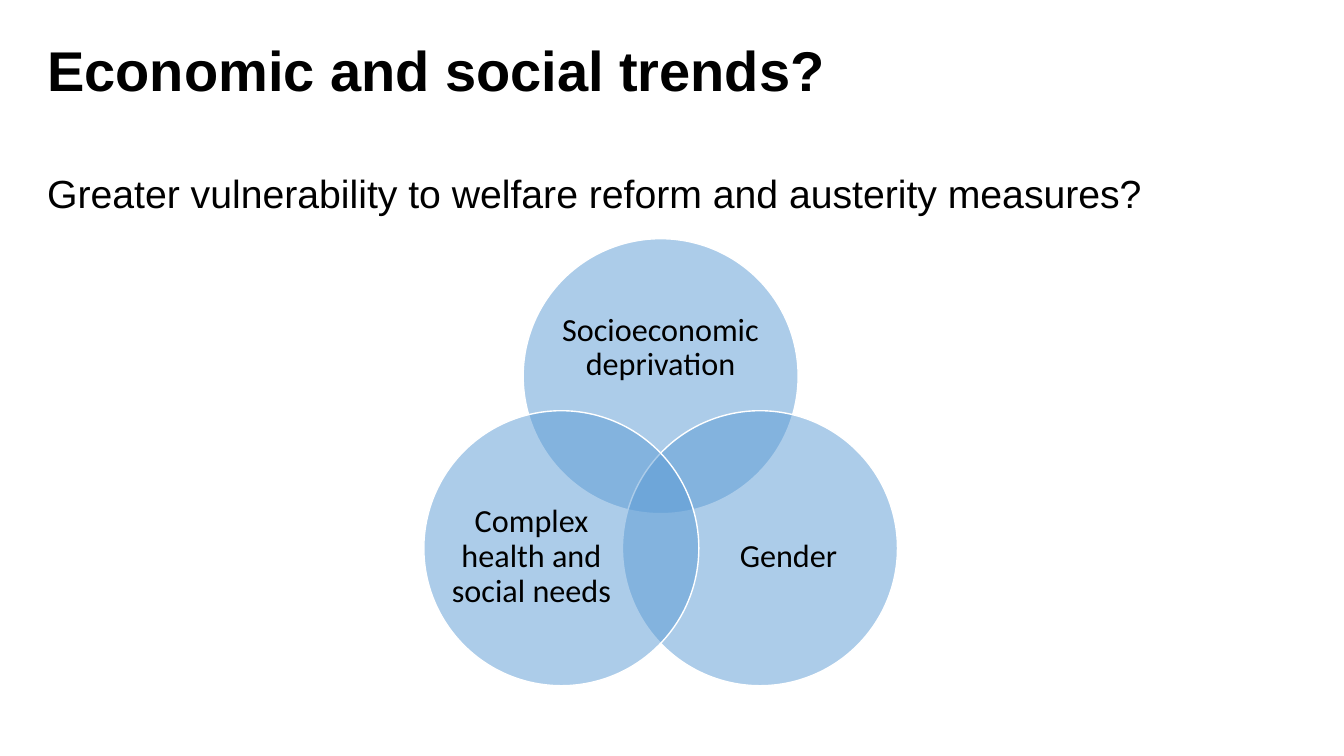
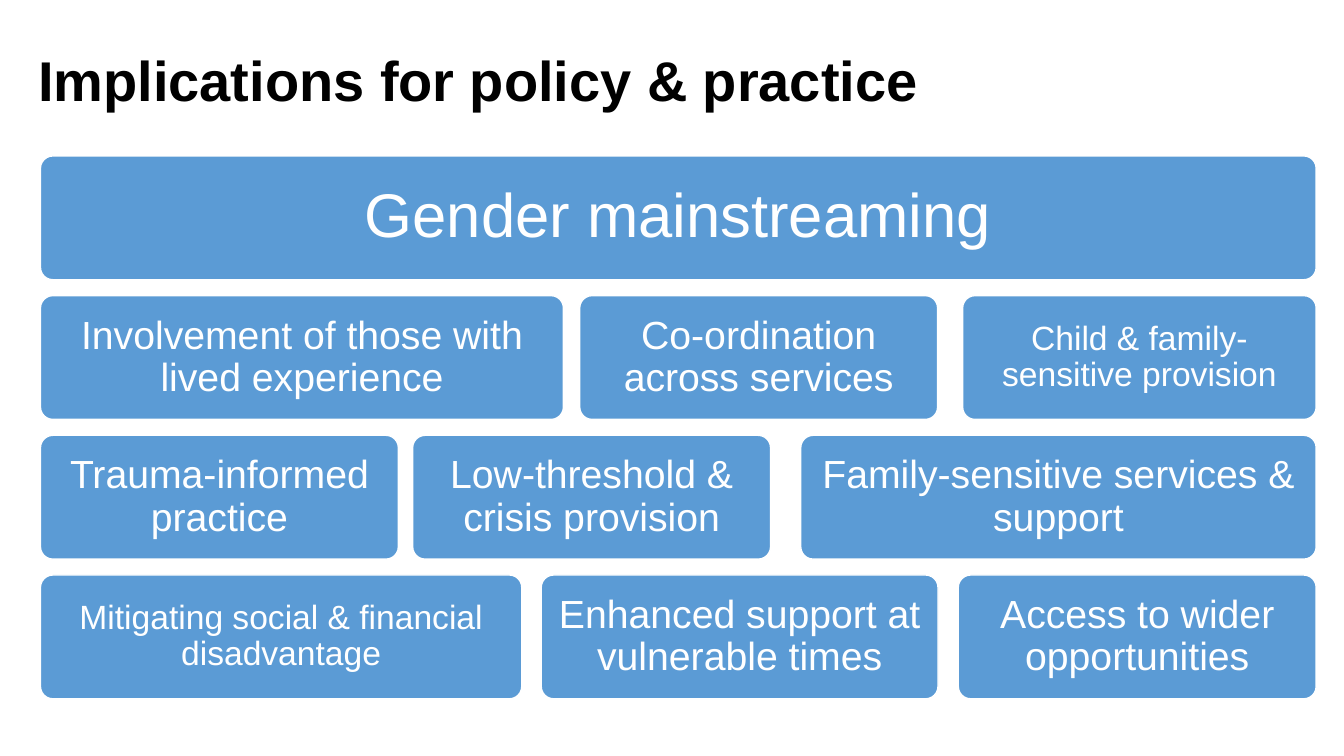
from math import cos, radians, sin

from lxml import etree
from pptx import Presentation
from pptx import util as u
from pptx.dml.color import RGBColor
from pptx.enum import shapes, text
from pptx.oxml.ns import qn

BLACK, WHITE, BLUE = "000000", "FFFFFF", "5B9BD5"
TITLE_ONLY = 5

VENN_CENTRE = (16.65, 12.37)
VENN_SPREAD = 2.89
VENN_DIAMETER = 6.93
VENN_SETS = [
    ("Socioeconomic deprivation", -90, (0, -0.71), (5.08, 3.12)),
    ("Gender", 30, (0.72, 0.22), (4.17, 3.81)),
    ("Complex health and social needs", 150, (-0.75, 0.22), (4.17, 3.81)),
]

WALL_TOP = 3.93
ROW_PITCH = 3.52
BRICK_HEIGHT = 3.12
WALL = [
    [("Gender mainstreaming", 1.02, 32.15, 44)],
    [("Involvement of those with lived experience", 1.02, 13.18, 28),
     ("Co-ordination across services", 14.61, 9.02, 28),
     ("Child & family-sensitive provision", 24.26, 8.91, 24)],
    [("Trauma-informed practice", 1.02, 9.02, 28),
     ("Low-threshold & crisis provision", 10.4, 9.02, 28),
     ("Family-sensitive services & support", 20.18, 12.99, 28)],
    [("Mitigating social & financial disadvantage", 1.02, 12.13, 24),
     ("Enhanced support at vulnerable times", 13.64, 10, 28),
     ("Access to wider opportunities", 24.15, 9.02, 28)],
]


def colour(hex_code):
    """Turn a hex string into a colour."""
    return RGBColor.from_string(hex_code)


def write(shape, wording, size, hex_code=BLACK, font="Arial", bold=False,
          align=text.PP_ALIGN.CENTER, anchor=text.MSO_ANCHOR.MIDDLE, inset=None):
    """Put one formatted paragraph into a shape."""
    frame = shape.text_frame
    frame.word_wrap = True
    frame.auto_size = text.MSO_AUTO_SIZE.NONE
    frame.vertical_anchor = anchor
    if inset is not None:
        frame.margin_left = frame.margin_right = u.Cm(inset)
        frame.margin_top = frame.margin_bottom = u.Cm(inset)
    paragraph = frame.paragraphs[0]
    paragraph.text = wording
    paragraph.alignment = align
    paragraph.line_spacing = 0.9
    paragraph.font.name = font
    paragraph.font.size = u.Pt(size)
    paragraph.font.bold = bold
    paragraph.font.color.rgb = colour(hex_code)


def add_titled_slide(deck, wording, left, top):
    """Add a slide with a bold left-aligned title."""
    slide = deck.slides.add_slide(deck.slide_layouts[TITLE_ONLY])
    title = slide.shapes.title
    title.left, title.top = u.Cm(left), u.Cm(top)
    title.width, title.height = u.Cm(29.21), u.Cm(3.68)
    write(title, wording, 40, bold=True, align=text.PP_ALIGN.LEFT)
    return slide


def add_text(slide, box, wording, size, **style):
    """Add a text box at left, top, width, height."""
    write(slide.shapes.add_textbox(*map(u.Cm, box)), wording, size, **style)


def add_blue_shape(slide, kind, box):
    """Add a blue preset shape with a thin white outline."""
    shape = slide.shapes.add_shape(kind, *map(u.Cm, box))
    shape.shadow.inherit = False
    shape.fill.solid()
    shape.fill.fore_color.rgb = colour(BLUE)
    shape.line.color.rgb = colour(WHITE)
    shape.line.width = u.Pt(1)
    return shape


def set_opacity(shape, percent):
    """Make the solid fill of a shape partly transparent."""
    fill = shape.element.spPr.find(qn("a:solidFill"))
    etree.SubElement(fill[0], qn("a:alpha"), val=str(percent * 1000))


def centred_box(x, y, width, height):
    """Return left, top, width, height around a centre."""
    return x - width / 2, y - height / 2, width, height


def add_venn_set(slide, wording, angle, label_shift, label_size):
    """Add one translucent circle of the Venn diagram and its label."""
    x = VENN_CENTRE[0] + VENN_SPREAD * cos(radians(angle))
    y = VENN_CENTRE[1] + VENN_SPREAD * sin(radians(angle))
    circle = add_blue_shape(slide, shapes.MSO_SHAPE.OVAL,
                            centred_box(x, y, VENN_DIAMETER, VENN_DIAMETER))
    set_opacity(circle, 50)
    label_box = centred_box(x + label_shift[0], y + label_shift[1], *label_size)
    add_text(slide, label_box, wording, 23, font="Calibri", inset=0)


def add_brick(slide, wording, left, top, width, size):
    """Add one rounded brick of the wall."""
    brick = add_blue_shape(slide, shapes.MSO_SHAPE.ROUNDED_RECTANGLE,
                           (left, top, width, BRICK_HEIGHT))
    brick.adjustments[0] = 0.1
    write(brick, wording, size, WHITE, inset=0.35)


def build_trends(deck):
    """Build the slide on economic and social trends."""
    slide = add_titled_slide(deck, "Economic and social trends?", 0.94, 0)
    add_text(slide, (0.94, 4.27, 30.48, 1.5),
             "Greater vulnerability to welfare reform and austerity measures?", 28,
             align=text.PP_ALIGN.LEFT, anchor=text.MSO_ANCHOR.TOP)
    for venn_set in VENN_SETS:
        add_venn_set(slide, *venn_set)


def build_implications(deck):
    """Build the slide on policy and practice."""
    slide = add_titled_slide(deck, "Implications for policy & practice", 0.71, 0.25)
    for row, bricks in enumerate(WALL):
        for wording, left, width, size in bricks:
            add_brick(slide, wording, left, WALL_TOP + row * ROW_PITCH, width, size)


def main():
    """Build and save the presentation."""
    deck = Presentation()
    deck.slide_width, deck.slide_height = u.Cm(33.87), u.Cm(19.05)
    build_trends(deck)
    build_implications(deck)
    deck.save("out.pptx")


if __name__ == "__main__":
    main()
